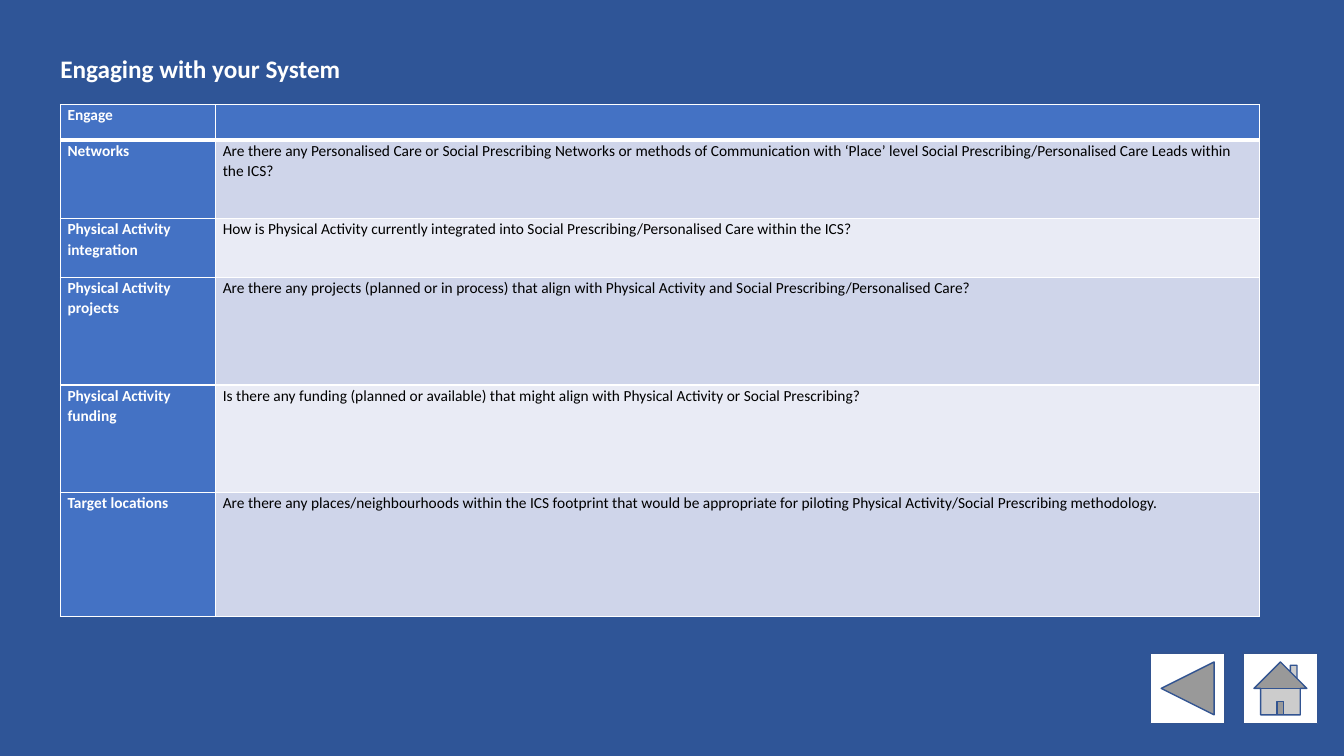
import lxml.etree
import pptx
import pptx.dml.color
import pptx.enum.shapes
import pptx.enum.text
import pptx.oxml.ns
import pptx.util

Inches = pptx.util.Inches
Pt = pptx.util.Pt
RGBColor = pptx.dml.color.RGBColor
Shapes = pptx.enum.shapes.MSO_SHAPE

NAVY = RGBColor(0x2F, 0x55, 0x97)
OUTLINE = RGBColor(0x32, 0x54, 0x91)
BLUE = RGBColor(0x44, 0x72, 0xC4)
BAND_DARK = RGBColor(0xCF, 0xD5, 0xEA)
BAND_LIGHT = RGBColor(0xE9, 0xEB, 0xF5)
WHITE = RGBColor(0xFF, 0xFF, 0xFF)
BLACK = RGBColor(0x00, 0x00, 0x00)

COLUMN_WIDTHS = [1.54, 10.35]
ROWS = [
    (0.35, "Engage", ""),
    (0.78, "Networks",
     "Are there any Personalised Care or Social Prescribing Networks or methods of Communication "
     "with ‘Place’ level Social Prescribing/Personalised Care Leads within the ICS?"),
    (0.58, "Physical Activity integration",
     "How is Physical Activity currently integrated into Social Prescribing/Personalised Care "
     "within the ICS?"),
    (1.07, "Physical Activity projects",
     "Are there any projects (planned or in process) that align with Physical Activity and "
     "Social Prescribing/Personalised Care?"),
    (1.07, "Physical Activity funding",
     "Is there any funding (planned or available) that might align with Physical Activity or "
     "Social Prescribing?"),
    (1.23, "Target locations",
     "Are there any places/neighbourhoods within the ICS footprint that would be appropriate "
     "for piloting Physical Activity/Social Prescribing methodology."),
]


def write_text(frame, text, size=11, color=WHITE, bold=True, spacing=None, after=None):
    """Write one formatted paragraph into a text frame."""
    para = frame.paragraphs[0]
    para.line_spacing = spacing
    para.space_after = after
    span = para.add_run()
    span.text = text
    span.font.name = "Calibri"
    span.font.size = Pt(size)
    span.font.bold = bold
    span.font.color.rgb = color


def add_borders(cell, top=1, bottom=1):
    """Draw white borders round a cell, with widths in points."""
    properties = cell._tc.get_or_add_tcPr()
    qn = pptx.oxml.ns.qn
    for side, width in (("L", 1), ("R", 1), ("T", top), ("B", bottom)):
        line = lxml.etree.SubElement(properties, qn("a:ln" + side), w=str(Pt(width)))
        fill = lxml.etree.SubElement(line, qn("a:solidFill"))
        lxml.etree.SubElement(fill, qn("a:srgbClr"), val=str(WHITE))


def fill_cell(cell, text, fill, color, bold, top, bottom):
    """Format one table cell and write its text."""
    cell.margin_left = cell.margin_right = Inches(0.07)
    cell.margin_top = cell.margin_bottom = Inches(0)
    add_borders(cell, top, bottom)
    cell.fill.solid()
    cell.fill.fore_color.rgb = fill
    write_text(cell.text_frame, text, color=color, bold=bold, spacing=1.07, after=Pt(8))


def add_questions(page):
    """Add the table of questions about the system."""
    height = sum(row[0] for row in ROWS)
    table = page.shapes.add_table(
        len(ROWS), len(COLUMN_WIDTHS), Inches(0.6), Inches(1.04),
        Inches(sum(COLUMN_WIDTHS)), Inches(height)).table
    for column, width in zip(table.columns, COLUMN_WIDTHS):
        column.width = Inches(width)
    for index, (row_height, topic, question) in enumerate(ROWS):
        table.rows[index].height = Inches(row_height)
        top = 3 if index == 1 else 1
        bottom = 3 if index == 0 else 1
        band = BAND_DARK if index % 2 else BAND_LIGHT
        fill_cell(table.cell(index, 0), topic, BLUE, WHITE, True, top, bottom)
        fill_cell(table.cell(index, 1), question, band if index else BLUE, BLACK, False,
                  top, bottom)


def add_title(page, text):
    """Add the slide heading."""
    box = page.shapes.add_textbox(Inches(0.5), Inches(0.48), Inches(10.14), Inches(0.4))
    frame = box.text_frame
    frame.word_wrap = True
    frame.auto_size = pptx.enum.text.MSO_AUTO_SIZE.SHAPE_TO_FIT_TEXT
    frame.vertical_anchor = pptx.enum.text.MSO_ANCHOR.MIDDLE
    write_text(frame, text, size=18)


def add_button(page, kind, left):
    """Add a white navigation button."""
    button = page.shapes.add_shape(kind, Inches(left), Inches(6.48), Inches(0.74), Inches(0.7))
    button.shadow.inherit = False
    button.fill.solid()
    button.fill.fore_color.rgb = WHITE
    button.line.color.rgb = OUTLINE
    button.line.width = Pt(1)


def main():
    """Build the slide and save the deck."""
    deck = pptx.Presentation()
    deck.slide_width = Inches(13.33)
    deck.slide_height = Inches(7.5)
    page = deck.slides.add_slide(deck.slide_layouts[6])
    page.background.fill.solid()
    page.background.fill.fore_color.rgb = NAVY
    add_button(page, Shapes.ACTION_BUTTON_HOME, 12.33)
    add_button(page, Shapes.ACTION_BUTTON_BACK_OR_PREVIOUS, 11.41)
    add_questions(page)
    add_title(page, "Engaging with your System")
    deck.save("out.pptx")


if __name__ == "__main__":
    main()
